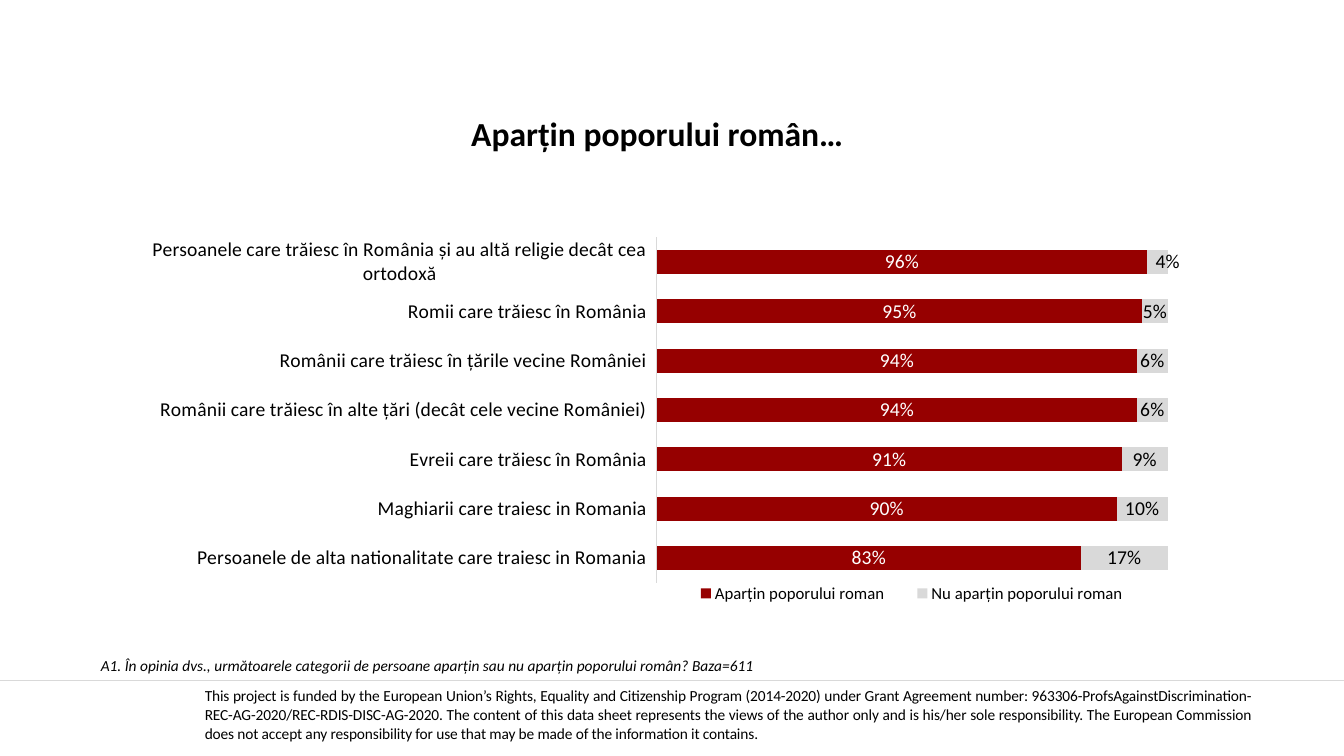
from lxml.etree import SubElement
from pptx import Presentation
from pptx.chart.data import CategoryChartData
from pptx.dml.color import RGBColor
from pptx.enum.chart import (XL_CHART_TYPE, XL_LABEL_POSITION, XL_LEGEND_POSITION,
                             XL_TICK_LABEL_POSITION, XL_TICK_MARK)
from pptx.enum.shapes import MSO_CONNECTOR
from pptx.enum.text import MSO_ANCHOR, MSO_AUTO_SIZE, PP_ALIGN
from pptx.oxml import parse_xml
from pptx.oxml.ns import nsdecls, qn
from pptx.util import Cm, Pt


def color(code):
    return RGBColor.from_string(code)


def style(font, size, code="000000"):
    font.name = "Calibri"
    font.size = Pt(size)
    font.color.rgb = color(code)


deck = Presentation()
deck.slide_width, deck.slide_height = Cm(33.87), Cm(19.05)
slide = deck.slides.add_slide(deck.slide_layouts[6])
shapes = slide.shapes

# Funding note
table = shapes.add_table(1, 1, Cm(5.16), Cm(16.71), Cm(26.39), Cm(2.64)).table
table.first_row = table.horz_banding = False
cell = table.cell(0, 0)
cell.fill.background()
cell.margin_left = cell.margin_right = cell.margin_top = cell.margin_bottom = 0
cell.vertical_anchor = MSO_ANCHOR.MIDDLE
para = cell.text_frame.paragraphs[0]
para.alignment = PP_ALIGN.JUSTIFY
run = para.add_run()
run.text = (
    "This project is funded by the European Union’s Rights, Equality and Citizenship "
    "Program (2014-2020) under Grant Agreement number: 963306-ProfsAgainstDiscrimination-"
    "REC-AG-2020/REC-RDIS-DISC-AG-2020. The content of this data sheet represents the views "
    "of the author only and is his/her sole responsibility. The European Commission does not "
    "accept any responsibility for use that may be made of the information it contains.")
style(run.font, 11)
run.font._element.set("spc", "-10")

# Chart data
data = CategoryChartData(number_format="###0%")
data.categories = [
    "Persoanele care trăiesc în România și au altă religie decât cea ortodoxă",
    "Romii care trăiesc în România",
    "Românii care trăiesc în țările vecine României",
    "Românii care trăiesc în alte țări (decât cele vecine României)",
    "Evreii care trăiesc în România",
    "Maghiarii care traiesc in Romania",
    "Persoanele de alta nationalitate care traiesc in Romania",
]
data.add_series("Aparțin poporului roman", [0.96, 0.95, 0.94, 0.94, 0.91, 0.9, 0.83])
data.add_series("Nu aparțin poporului roman", [0.04, 0.05, 0.06, 0.06, 0.09, 0.1, 0.17])
chart = shapes.add_chart(XL_CHART_TYPE.BAR_STACKED_100, Cm(3.84), Cm(5.69),
                         Cm(26.19), Cm(9.96), data).chart
chart.has_title = False
style(chart.font, 10)

# Bars and labels
plot = chart.plots[0]
plot.gap_width, plot.overlap = 106, 100
plot.vary_by_categories = False
for bar, fill, ink in zip(plot.series, ("960000", "D9D9D9"), ("FFFFFF", "000000")):
    bar.format.fill.solid()
    bar.format.fill.fore_color.rgb = color(fill)
    labels = bar.data_labels
    labels.show_value = True
    labels.number_format = "###0%"
    labels.number_format_is_linked = False
    labels.position = XL_LABEL_POSITION.CENTER
    style(labels.font, 14, ink)

# The narrowest bar has its label nudged right
label = plot.series[1].points[0].data_label
style(label.font, 14)
label.position = XL_LABEL_POSITION.CENTER
spot = plot.series[1].data_labels._element.find(qn("c:dLbl"))
spot.find(qn("c:idx")).addnext(parse_xml(
    f'<c:layout {nsdecls("c")}><c:manualLayout><c:x val="0.01"/><c:y val="0"/>'
    '</c:manualLayout></c:layout>'))

# Axes
names = chart.category_axis
names.reverse_order = True
names.major_tick_mark = names.minor_tick_mark = XL_TICK_MARK.NONE
names.tick_label_position = XL_TICK_LABEL_POSITION.LOW
names.format.line.color.rgb = color("D9D9D9")
names.format.line.width = Pt(0.75)
style(names.tick_labels.font, 14)
scale = chart.value_axis
scale.visible = False
scale.minimum_scale = 0
scale.has_major_gridlines = False

# Legend
chart.has_legend = True
key = chart.legend
key.position = XL_LEGEND_POSITION.BOTTOM
key.include_in_layout = False
style(key.font, 12)

# Places of plot and legend, as parts of the chart
area = chart._chartSpace.chart.plotArea
for old in area.findall(qn("c:layout")):
    area.remove(old)
for old in key._element.findall(qn("c:layout")):
    key._element.remove(old)
for kind, box in (("plot", (0.484, 0.029, 0.493, 0.874)), ("key", (0.5, 0.89, 0.46, 0.08))):
    layout = parse_xml(f'<c:layout {nsdecls("c")}><c:manualLayout/></c:layout>')
    if kind == "plot":
        SubElement(layout[0], qn("c:layoutTarget")).set("val", "inner")
        area.insert(0, layout)
    else:
        key._element.find(qn("c:legendPos")).addnext(layout)
    for tag in ("xMode", "yMode"):
        SubElement(layout[0], qn("c:" + tag)).set("val", "edge")
    for tag, part in zip("xywh", box):
        SubElement(layout[0], qn("c:" + tag)).set("val", str(part))

# Footer rule
rule = shapes.add_connector(MSO_CONNECTOR.STRAIGHT, 0, Cm(17.15), Cm(33.87), Cm(17.15))
rule.line.color.rgb = color("D9D9D9")
rule.line.width = Pt(0.5)
SubElement(rule._element.spPr, qn("a:effectLst"))

# Title
frame = shapes.add_textbox(Cm(2.29), Cm(2.59), Cm(28.55), Cm(1.63)).text_frame
frame.word_wrap = True
frame.vertical_anchor = MSO_ANCHOR.MIDDLE
para = frame.paragraphs[0]
para.alignment = PP_ALIGN.CENTER
para.line_spacing = 0.9
run = para.add_run()
run.text = "Aparțin poporului român…"
style(run.font, 24)
run.font.bold = True

# Survey question
frame = shapes.add_textbox(Cm(2.29), Cm(16.41), Cm(17.32), Cm(0.74)).text_frame
frame.word_wrap = True
frame.auto_size = MSO_AUTO_SIZE.SHAPE_TO_FIT_TEXT
run = frame.paragraphs[0].add_run()
run.text = ("A1. În opinia dvs., următoarele categorii de persoane aparțin sau nu aparțin "
            "poporului român? Baza=611")
style(run.font, 11)
run.font.italic = True

deck.save("out.pptx")
